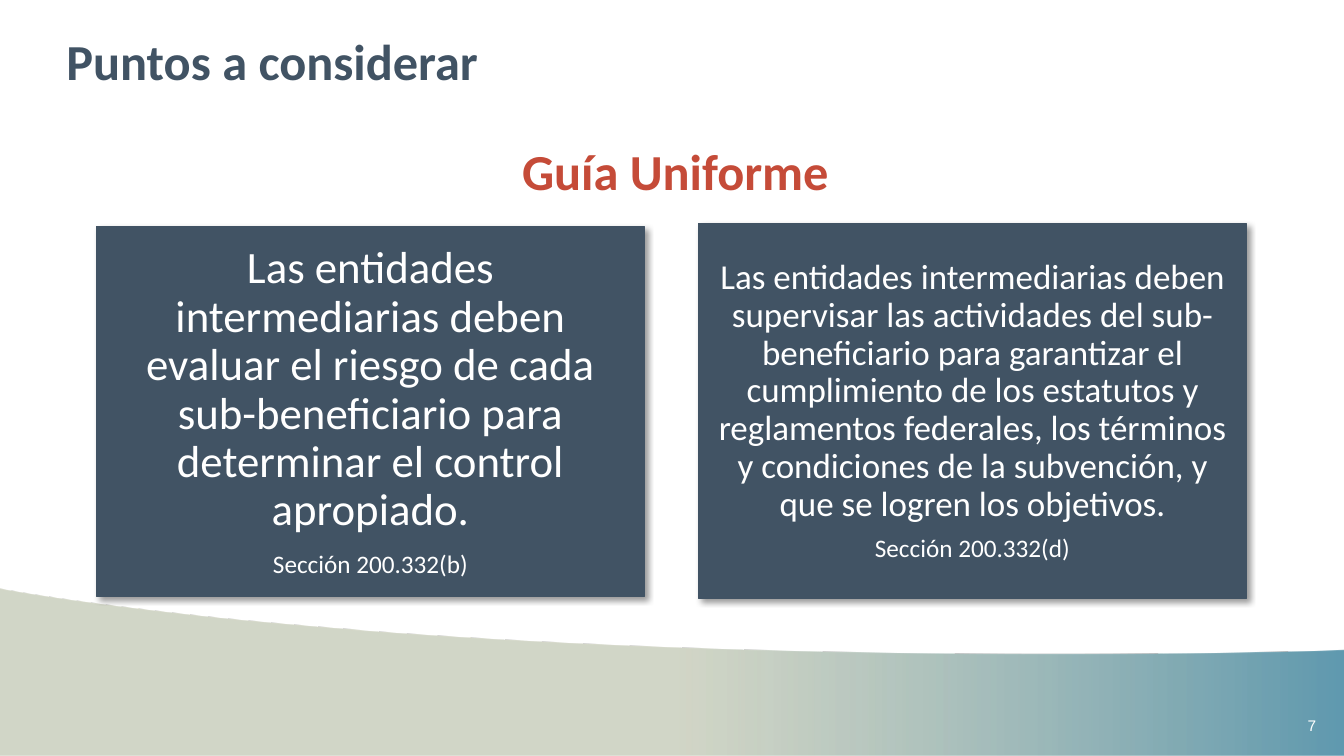
"""Build the slide about the uniform guidance points to consider."""
from dataclasses import dataclass

from lxml.etree import SubElement
from pptx import Presentation
from pptx.dml.color import RGBColor
from pptx.enum.shapes import MSO_SHAPE
from pptx.enum.text import MSO_ANCHOR, PP_ALIGN
from pptx.oxml.ns import qn
from pptx.util import Inches, Pt

COLORS = {
    "slate": "415364",
    "brick": "C54B38",
    "sage": "B7BDA4",
    "teal": "5F99AF",
    "white": "FFFFFF",
    "black": "000000",
}
SLIDE_WIDTH, SLIDE_HEIGHT = 13.33, 7.5
WAVE_CURVES = [
    ((10.41, 6.49), (7.25, 6.49), (4.36, 6.35), (2.16, 6.13)),
    ((2.16, 6.13), (1.33, 6.04), (0.61, 5.95), (0, 5.84)),
    ((SLIDE_WIDTH, 6.45), (12.4, 6.48), (11.42, 6.49), (10.41, 6.49)),
]
CURVE_STEPS = 24


@dataclass
class Label:
    text: str
    left: float
    top: float
    width: float
    height: float
    size: float
    color: str
    font: str = "Calibri"
    bold: bool = True
    wrap: bool = True
    align: PP_ALIGN = PP_ALIGN.LEFT


@dataclass
class Card:
    left: float
    top: float
    height: float
    inset: float
    size: float
    statement: str
    section: str
    width: float = 5.43


LABELS = [
    Label("7", 12.87, 7.06, 0.39, 0.29, 11, "white", "Arial", False, False),
    Label("Puntos a considerar", 0.56, 0.25, 12, 0.83, 36, "slate"),
    Label("Guía Uniforme", 0.7, 1.34, 12, 0.83, 36, "brick", align=PP_ALIGN.CENTER),
]
CARDS = [
    Card(0.96, 2.25, 3.67, 0.13, 32,
         "Las entidades intermediarias deben evaluar el riesgo de cada "
         "sub-beneficiario para determinar el control apropiado.",
         "Sección 200.332(b)"),
    Card(6.93, 2.22, 3.72, 0.1, 25,
         "Las entidades intermediarias deben supervisar las actividades del "
         "sub-beneficiario para garantizar el cumplimiento de los estatutos y "
         "reglamentos federales, los términos y condiciones de la subvención, "
         "y que se logren los objetivos.",
         "Sección 200.332(d)"),
]


def color_of(name: str) -> RGBColor:
    return RGBColor.from_string(COLORS[name])


def style_font(font, size: float, color: str, name: str = "Calibri", bold: bool = False) -> None:
    font.name, font.size, font.bold = name, Pt(size), bold
    font.color.rgb = color_of(color)


def curve_points(curve: tuple) -> list[tuple[int, int]]:
    points = []
    for step in range(CURVE_STEPS + 1):
        t = step / CURVE_STEPS
        weights = ((1 - t) ** 3, 3 * t * (1 - t) ** 2, 3 * t * t * (1 - t), t ** 3)
        points.append(tuple(
            Inches(sum(weight * point[axis] for weight, point in zip(weights, curve)))
            for axis in (0, 1)))
    return points


def draw_wave(page) -> None:
    falling, rising, right = (curve_points(curve) for curve in WAVE_CURVES)
    outline = right + falling[1:] + rising[1:]
    corners = [(Inches(x), Inches(SLIDE_HEIGHT)) for x in (0, SLIDE_WIDTH)]
    builder = page.shapes.build_freeform(*outline[0])
    builder.add_line_segments(outline[1:] + corners, close=True)
    wave = builder.convert_to_shape()
    wave.shadow.inherit = False
    wave.line.fill.background()
    wave.fill.gradient()
    wave.fill.gradient_angle = 0
    for stop, position, name in zip(wave.fill.gradient_stops, (0.5, 1), ("sage", "teal")):
        stop.position = position
        stop.color.rgb = color_of(name)
    sage = next(wave._element.spPr.iter(qn("a:srgbClr")))
    SubElement(sage, qn("a:alpha"), val="61000")


def draw_label(page, label: Label) -> None:
    box = page.shapes.add_textbox(
        Inches(label.left), Inches(label.top), Inches(label.width), Inches(label.height))
    frame = box.text_frame
    frame.word_wrap = label.wrap
    frame.text = label.text
    para = frame.paragraphs[0]
    para.alignment = label.align
    style_font(para.runs[0].font, label.size, label.color, label.font, label.bold)


def add_shadow(shape) -> None:
    shape.shadow.inherit = False
    effects = shape._element.spPr.find(qn("a:effectLst"))
    shadow = SubElement(effects, qn("a:outerShdw"), blurRad=str(Pt(4)), dist=str(Pt(3)),
                        dir=str(45 * 60000), algn="tl", rotWithShape="0")
    tint = SubElement(shadow, qn("a:srgbClr"), val=COLORS["black"])
    SubElement(tint, qn("a:alpha"), val="40000")


def draw_card(page, card: Card) -> None:
    box = page.shapes.add_shape(
        MSO_SHAPE.RECTANGLE, Inches(card.left), Inches(card.top),
        Inches(card.width), Inches(card.height))
    box.fill.solid()
    box.fill.fore_color.rgb = color_of("slate")
    box.line.color.rgb = color_of("slate")
    box.line.width = Pt(0.75)
    add_shadow(box)
    frame = box.text_frame
    frame.word_wrap = True
    frame.vertical_anchor = MSO_ANCHOR.MIDDLE
    frame.margin_left = frame.margin_right = Inches(card.inset)
    frame.margin_top = frame.margin_bottom = Inches(card.inset)
    frame.text = f"{card.statement}\n{card.section}"
    for para, size in zip(frame.paragraphs, (card.size, 18)):
        para.alignment = PP_ALIGN.CENTER
        para.line_spacing = 0.9
        para.space_after = Pt(0.35 * size)
        style_font(para.runs[0].font, size, "white")


def main() -> None:
    deck = Presentation()
    deck.slide_width, deck.slide_height = Inches(SLIDE_WIDTH), Inches(SLIDE_HEIGHT)
    page = deck.slides.add_slide(deck.slide_layouts[6])
    draw_wave(page)
    for label in LABELS:
        draw_label(page, label)
    for card in CARDS:
        draw_card(page, card)
    deck.save("out.pptx")


if __name__ == "__main__":
    main()
